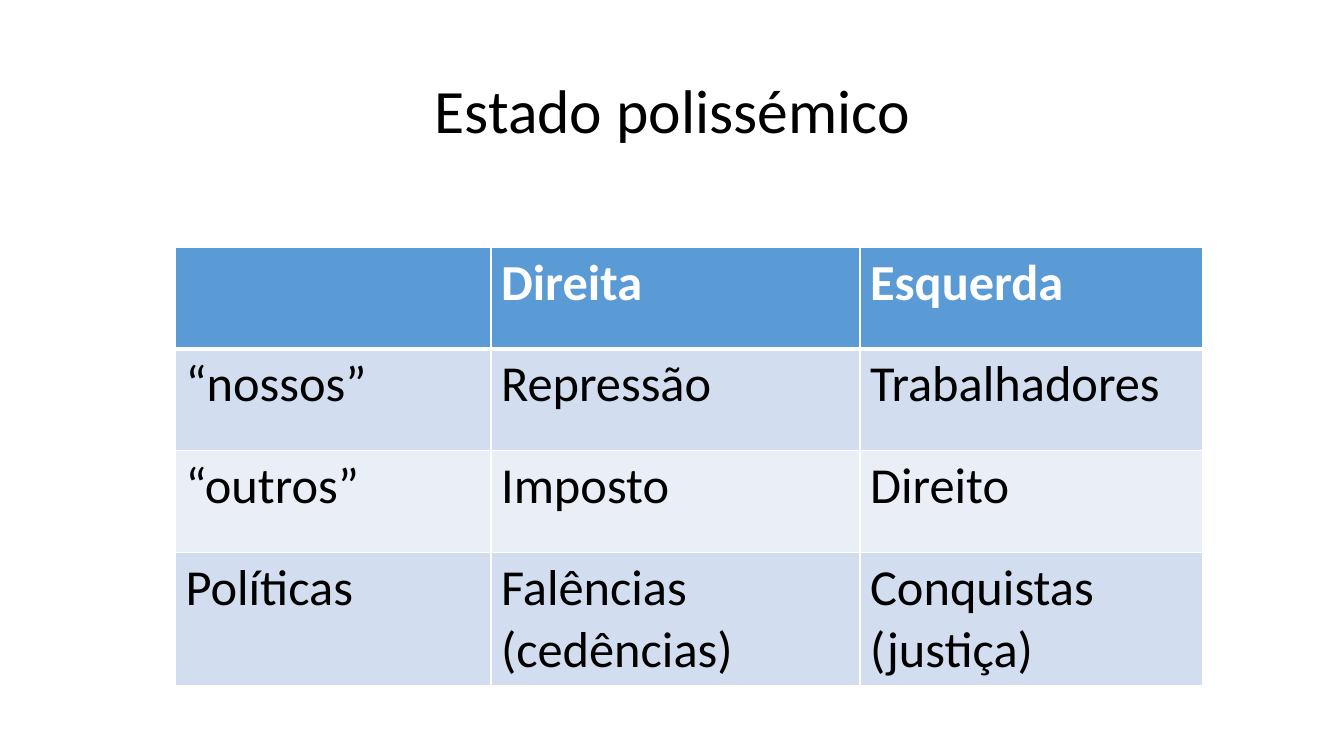
"""Build a slide with a titled table comparing views of the State."""
from dataclasses import dataclass

from lxml.etree import SubElement
from pptx import Presentation
from pptx.dml.color import RGBColor
from pptx.enum.text import MSO_ANCHOR as Anchor, PP_ALIGN as Align
from pptx.oxml.ns import qn
from pptx.util import Inches, Pt

TITLE = "Estado polissémico"
ROWS = [
    ("", "Direita", "Esquerda"),
    ("“nossos”", "Repressão", "Trabalhadores"),
    ("“outros”", "Imposto", "Direito"),
    ("Políticas", "Falências (cedências)", "Conquistas (justiça)"),
]
SLIDE_SIZE = (13.33, 7.5)
TITLE_BOX = (0.92, 0.4, 11.5, 1.45)
TABLE_CORNER = (1.74, 2.45)
COLUMN_WIDTHS = (3.13, 3.66, 3.4)
ROW_HEIGHT = 1.01


@dataclass(frozen=True)
class Theme:
    font: str = "Calibri"
    title_size: int = 44
    cell_size: int = 36
    ink: str = "000000"
    paper: str = "FFFFFF"
    header: str = "5B9BD5"
    bands: tuple = ("D2DEEF", "EAEFF7")
    rule: int = 1
    header_rule: int = 3


THEME = Theme()


def write(frame, text, size=THEME.cell_size, color=THEME.ink, bold=False,
          align=Align.LEFT, spacing=1.0):
    para = frame.paragraphs[0]
    para.alignment = align
    para.line_spacing = spacing
    para.font.size = Pt(size)
    if text:
        span = para.add_run()
        span.text = text
        span.font.name = THEME.font
        span.font.size = Pt(size)
        span.font.bold = bold
        span.font.color.rgb = RGBColor.from_string(color)


def set_borders(cell, top, bottom):
    properties = cell._tc.get_or_add_tcPr()
    widths = {"L": THEME.rule, "R": THEME.rule, "T": top, "B": bottom}
    for position, (side, width) in enumerate(widths.items()):
        line = SubElement(properties, qn(f"a:ln{side}"), w=str(Pt(width)))
        fill = SubElement(line, qn("a:solidFill"))
        SubElement(fill, qn("a:srgbClr"), val=THEME.paper)
        properties.insert(position, line)


def add_title(page):
    title = page.shapes.title
    title.left, title.top, title.width, title.height = map(Inches, TITLE_BOX)
    title.text_frame.vertical_anchor = Anchor.MIDDLE
    write(title.text_frame, TITLE, size=THEME.title_size,
          align=Align.CENTER, spacing=0.9)


def add_comparison(page):
    size = (sum(COLUMN_WIDTHS), ROW_HEIGHT * len(ROWS))
    table = page.shapes.add_table(len(ROWS), len(COLUMN_WIDTHS),
                                  *map(Inches, TABLE_CORNER + size)).table
    for column, width in zip(table.columns, COLUMN_WIDTHS):
        column.width = Inches(width)
    for r, texts in enumerate(ROWS):
        table.rows[r].height = Inches(ROW_HEIGHT)
        is_header = r == 0
        fill = THEME.header if is_header else THEME.bands[(r - 1) % 2]
        for c, text in enumerate(texts):
            cell = table.cell(r, c)
            cell.fill.solid()
            cell.fill.fore_color.rgb = RGBColor.from_string(fill)
            set_borders(cell,
                        top=THEME.header_rule if r == 1 else THEME.rule,
                        bottom=THEME.header_rule if is_header else THEME.rule)
            write(cell.text_frame, text, bold=is_header,
                  color=THEME.paper if is_header else THEME.ink)


def main():
    deck = Presentation()
    deck.slide_width, deck.slide_height = map(Inches, SLIDE_SIZE)
    page = deck.slides.add_slide(deck.slide_layouts.get_by_name("Title Only"))
    add_title(page)
    add_comparison(page)
    deck.save("out.pptx")


if __name__ == "__main__":
    main()
